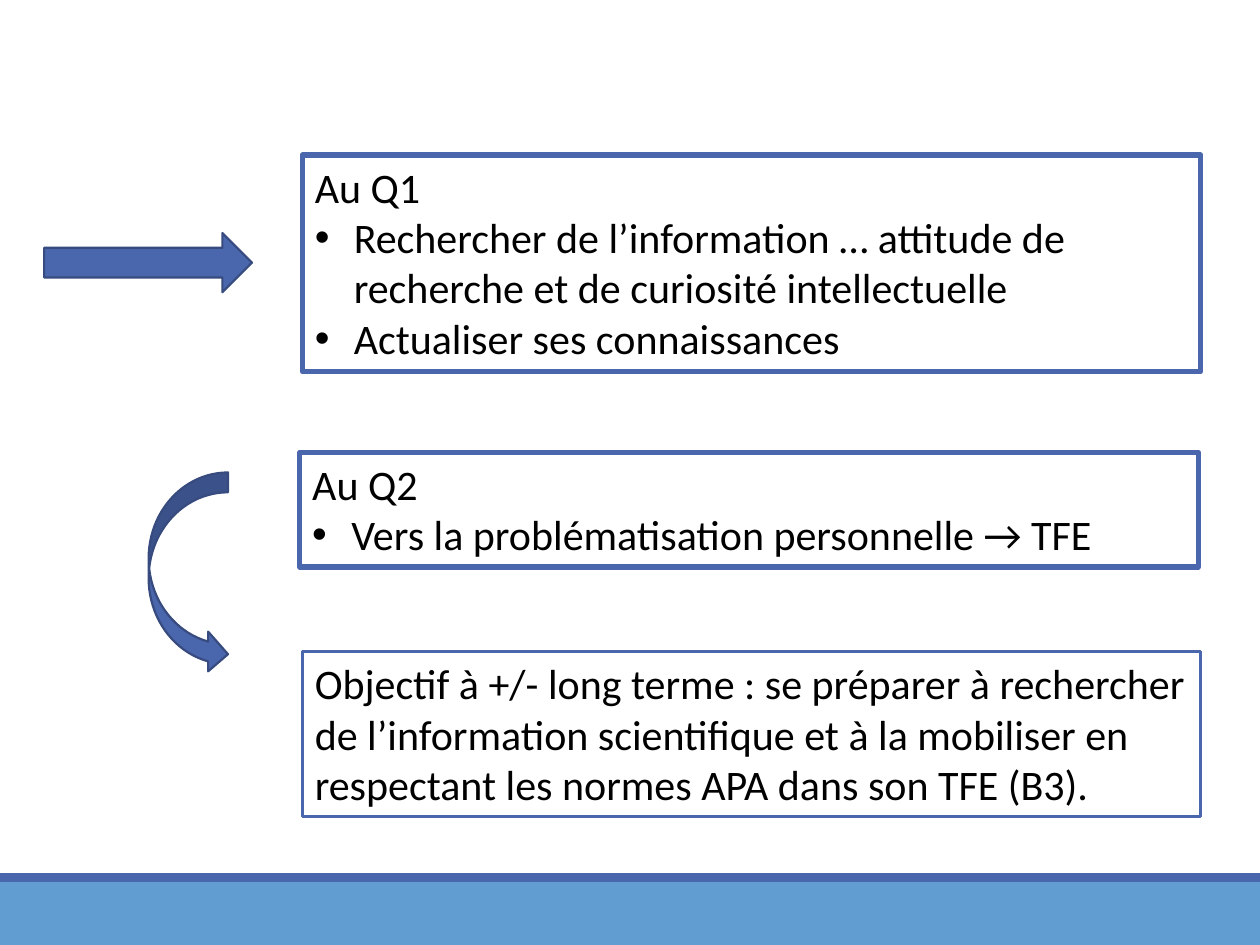
from lxml.etree import SubElement
from pptx import Presentation
from pptx.dml.color import RGBColor
from pptx.enum.shapes import MSO_SHAPE
from pptx.enum.text import MSO_ANCHOR, MSO_AUTO_SIZE, PP_ALIGN
from pptx.oxml.ns import qn
from pptx.util import Inches, Pt

BLUE = RGBColor(0x4A, 0x66, 0xAC)
DARK_BLUE = RGBColor(0x37, 0x4B, 0x7F)
LIGHT_BLUE = RGBColor(0x62, 0x9D, 0xD1)
BLACK = RGBColor(0, 0, 0)

FOOTER_BANDS = [
    ((0, 7, 10, 0.5), LIGHT_BLUE),
    ((0, 6.93, 10, 0.07), BLUE),
]
ARROWS = [
    (MSO_SHAPE.RIGHT_ARROW, (0.35, 1.85, 1.65, 0.47)),
    (MSO_SHAPE.CURVED_RIGHT_ARROW, (1.18, 3.75, 0.63, 1.6)),
]
STAGES = [
    ((2.4, 1.23, 7.13, 1.72), 3, "Au Q1", [
        "Rechercher de l’information … attitude de recherche et de curiosité intellectuelle",
        "Actualiser ses connaissances",
    ]),
    ((2.4, 5.17, 7.13, 1.31), 2,
     "Objectif à +/- long terme : se préparer à rechercher de l’information "
     "scientifique et à la mobiliser en respectant les normes APA dans son TFE (B3).", []),
    ((2.38, 3.59, 7.13, 0.91), 3, "Au Q2", [
        "Vers la problématisation personnelle → TFE",
    ]),
]
BULLET_INDENT = Inches(0.31)


def add_block(slide, kind, box, fill=None, line=None, width=0):
    block = slide.shapes.add_shape(kind, *map(Inches, box))
    block.shadow.inherit = False
    if fill is None:
        block.fill.background()
    else:
        block.fill.solid()
        block.fill.fore_color.rgb = fill
    if line is None:
        block.line.fill.background()
    else:
        block.line.color.rgb = line
        block.line.width = Pt(width)
    return block


def write_paragraph(paragraph, text, bulleted):
    paragraph.alignment = PP_ALIGN.LEFT
    run = paragraph.add_run()
    run.text = text
    run.font.name = "Calibri"
    run.font.size = Pt(24)
    run.font.color.rgb = BLACK
    if bulleted:
        properties = paragraph._p.get_or_add_pPr()
        properties.set("marL", str(BULLET_INDENT))
        properties.set("indent", str(-BULLET_INDENT))
        SubElement(properties, qn("a:buFont")).set("typeface", "Arial")
        SubElement(properties, qn("a:buChar")).set("char", "•")


def add_stage(slide, box, width, heading, points):
    frame = add_block(slide, MSO_SHAPE.RECTANGLE, box, line=BLUE, width=width).text_frame
    frame.word_wrap = True
    frame.auto_size = MSO_AUTO_SIZE.SHAPE_TO_FIT_TEXT
    frame.vertical_anchor = MSO_ANCHOR.TOP
    write_paragraph(frame.paragraphs[0], heading, False)
    for point in points:
        write_paragraph(frame.add_paragraph(), point, True)


def main():
    deck = Presentation()
    deck.slide_width, deck.slide_height = Inches(10), Inches(7.5)
    slide = deck.slides.add_slide(deck.slide_layouts[6])
    for box, color in FOOTER_BANDS:
        add_block(slide, MSO_SHAPE.RECTANGLE, box, fill=color)
    for kind, box in ARROWS:
        add_block(slide, kind, box, fill=BLUE, line=DARK_BLUE, width=1.25)
    for stage in STAGES:
        add_stage(slide, *stage)
    deck.save("out.pptx")


if __name__ == "__main__":
    main()
